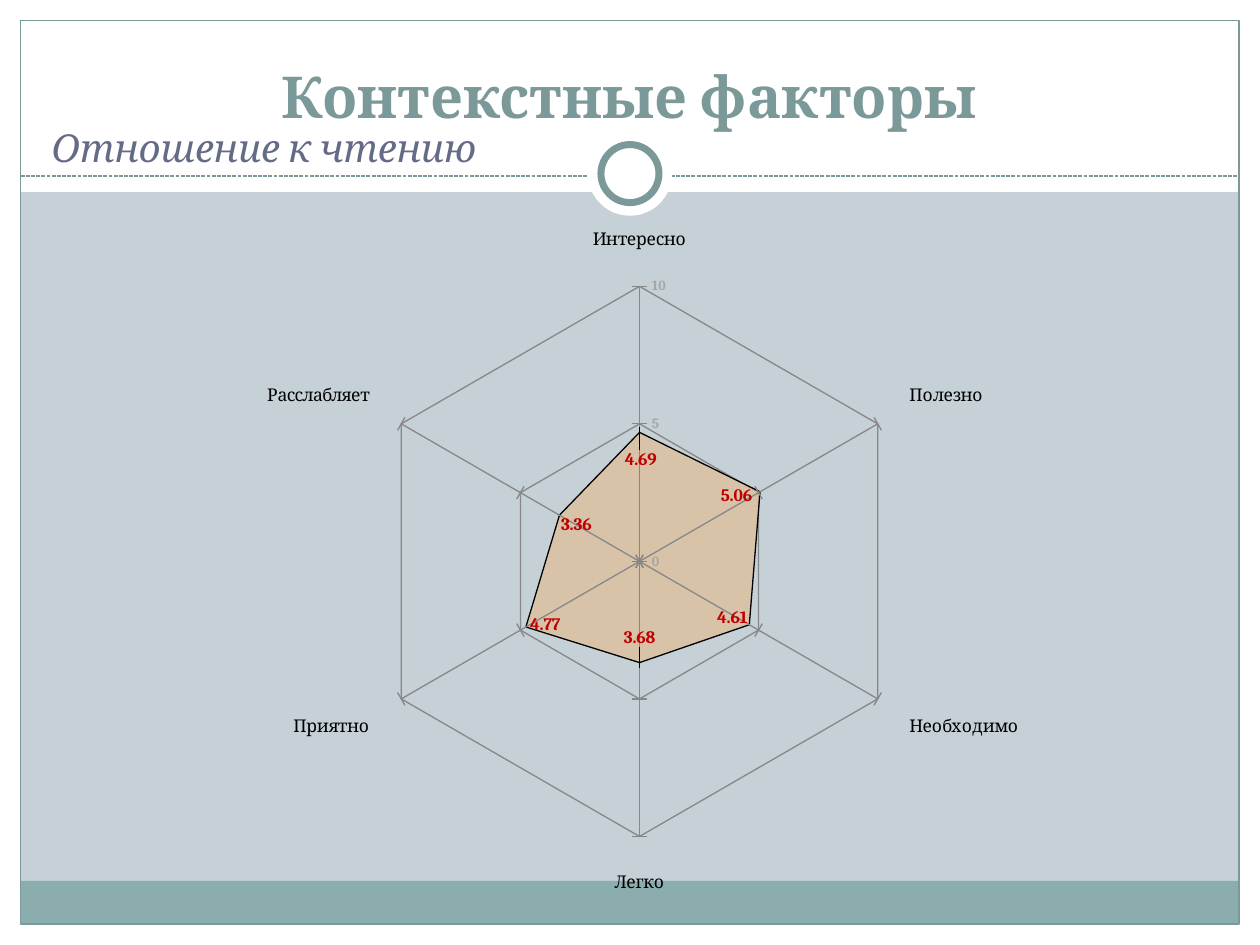
import pptx
import pptx.chart.data
import pptx.dml.color
import pptx.enum.chart
import pptx.enum.dml
import pptx.enum.shapes
import pptx.enum.text
import pptx.oxml
import pptx.oxml.ns
import pptx.util
from pptx.util import Cm

# Content: category, value, label shift in percent of the chart (x, y)
TITLE = "Контекстные факторы"
SUBTITLE = "Отношение к чтению"
ATTITUDES = [
    ("Интересно", 4.69, (0.1, 6.6)),
    ("Полезно", 5.06, (-3.7, 2.3)),
    ("Необходимо", 4.61, (-3.1, -2.7)),
    ("Легко", 3.68, (0, -6.3)),
    ("Приятно", 4.77, (3.3, -2.1)),
    ("Расслабляет", 3.36, (3.1, 3)),
]
PLOT_PERCENT = {"x": 26.4, "y": 11.2, "w": 46.8, "h": 77.6}

THEME = {
    "font": "Cambria",
    "back": "C5D1D7", "white": "FFFFFF", "band": "8CADAE", "accent": "7C999A",
    "subtitle": "646B86", "text": "000000", "scale": "A6A6A6", "grid": "878787",
    "area": "E3BC92", "value": "C00000",
    "title_pt": 33, "subtitle_pt": 22, "chart_pt": 10, "scale_pt": 8,
}

# Slide geometry in centimetres
W, H = 25.4, 19.05
EDGE = 0.42
HEADER_H = 3.87
BAND_H = 0.87
RULE_Y = 3.55
RING_Y = 3.5


def color(name):
    return pptx.dml.color.RGBColor.from_string(THEME[name])


def set_line(line, name, width):
    line.color.rgb = color(name)
    line.width = pptx.util.Pt(width)


def set_font(font, name, size, **style):
    font.name = THEME["font"]
    font.size = pptx.util.Pt(THEME[size])
    font.color.rgb = color(name)
    for key, value in style.items():
        setattr(font, key, value)


def add_shape(kind, x, y, w, h, fill=None, line=None, width=0.75):
    sp = s.shapes.add_shape(kind, Cm(x), Cm(y), Cm(w), Cm(h))
    sp.shadow.inherit = False
    if fill:
        sp.fill.solid()
        sp.fill.fore_color.rgb = color(fill)
    else:
        sp.fill.background()
    if line:
        set_line(sp.line, line, width)
    else:
        sp.line.fill.background()
    return sp


def add_text(text, x, y, w, h, anchor):
    tf = s.shapes.add_textbox(Cm(x), Cm(y), Cm(w), Cm(h)).text_frame
    tf.word_wrap = True
    tf.vertical_anchor = anchor
    p = tf.paragraphs[0]
    p.text = text
    return p


def make_layout(modes, percents):
    parts = "".join('<c:%s val="%s"/>' % mode for mode in modes)
    parts += "".join('<c:%s val="%.3f"/>' % (key, value / 100)
                     for key, value in percents.items())
    return pptx.oxml.parse_xml(
        "<c:layout %s><c:manualLayout>%s</c:manualLayout></c:layout>"
        % (pptx.oxml.ns.nsdecls("c"), parts))


prs = pptx.Presentation()
prs.slide_width, prs.slide_height = Cm(W), Cm(H)
s = prs.slides.add_slide(prs.slide_layouts[6])
s.background.fill.solid()
s.background.fill.fore_color.rgb = color("back")

RECT = pptx.enum.shapes.MSO_SHAPE.RECTANGLE
OVAL = pptx.enum.shapes.MSO_SHAPE.OVAL
inner_w, inner_h = W - 2 * EDGE, H - 2 * EDGE

# White margins, bottom band and frame
for box in [(0, H - EDGE, W, EDGE), (0, 0, W, HEADER_H),
            (0, 0, EDGE, H), (W - EDGE, 0, EDGE, H)]:
    add_shape(RECT, *box, fill="white")
add_shape(RECT, EDGE, H - EDGE - BAND_H, inner_w, BAND_H, fill="band")
add_shape(RECT, EDGE, EDGE, inner_w, inner_h, line="accent")

# Dashed header rule
rule = s.shapes.add_connector(pptx.enum.shapes.MSO_CONNECTOR.STRAIGHT,
                              Cm(EDGE), Cm(RULE_Y), Cm(W - EDGE), Cm(RULE_Y))
set_line(rule.line, "accent", 0.75)
rule.line.dash_style = pptx.enum.dml.MSO_LINE.SQUARE_DOT
rule._element.spPr.append(pptx.oxml.parse_xml(
    "<a:effectLst %s/>" % pptx.oxml.ns.nsdecls("a")))

# Ring on the rule
for d, line in [(1.7, None), (1.17, "accent")]:
    add_shape(OVAL, (W - d) / 2, RING_Y - d / 2, d, d, "white", line, 4)

# Title and subtitle
p = add_text(TITLE, 0.84, 0.62, 23.7, 2.12, pptx.enum.text.MSO_ANCHOR.BOTTOM)
p.alignment = pptx.enum.text.PP_ALIGN.CENTER
set_font(p.font, "accent", "title_pt", bold=True)
p = add_text(SUBTITLE, 0.79, 2.37, 24.13, 1.2, pptx.enum.text.MSO_ANCHOR.TOP)
p.space_before = pptx.util.Pt(4.4)
set_font(p.font, "subtitle", "subtitle_pt", italic=True)

# Radar chart
data = pptx.chart.data.CategoryChartData(number_format="0.00")
data.categories = [name for name, _, _ in ATTITUDES]
data.add_series("Series 1", [value for _, value, _ in ATTITUDES])
chart = s.shapes.add_chart(pptx.enum.chart.XL_CHART_TYPE.RADAR_FILLED,
                           Cm(1.09), Cm(4.17), Cm(23.7), Cm(14.3), data).chart
chart.has_legend = False
chart.has_title = False
set_font(chart.font, "text", "chart_pt")
plot = chart.plots[0]
plot.vary_by_categories = False

# Translucent area
series = plot.series[0]
series.format.fill.solid()
series.format.fill.fore_color.rgb = color("area")
set_line(series.format.line, "text", 0.75)
area = series._element.find(".//" + pptx.oxml.ns.qn("a:srgbClr"))
area.append(pptx.oxml.parse_xml(
    '<a:alpha %s val="66000"/>' % pptx.oxml.ns.nsdecls("a")))

# Value labels, moved inside the area
labels = series.data_labels
labels.show_value = True
labels.number_format = "0.00"
labels.number_format_is_linked = False
set_font(labels.font, "value", "chart_pt", bold=True)
for i in range(len(ATTITUDES)):
    set_font(series.points[i].data_label.font, "value", "chart_pt", bold=True)
label_elements = series._element.findall(".//" + pptx.oxml.ns.qn("c:dLbl"))
for element, (_, _, (dx, dy)) in zip(label_elements, ATTITUDES):
    element.insert(1, make_layout([], {"x": dx, "y": dy}))

# Axes
axis = chart.value_axis
axis.minimum_scale, axis.maximum_scale, axis.major_unit = 0, 10, 5
axis.major_tick_mark = pptx.enum.chart.XL_TICK_MARK.CROSS
axis.tick_labels.number_format = "0"
axis.tick_labels.number_format_is_linked = False
set_font(axis.tick_labels.font, "scale", "scale_pt", bold=True)
chart.category_axis.major_tick_mark = pptx.enum.chart.XL_TICK_MARK.OUTSIDE
for ax in (axis, chart.category_axis):
    ax.has_major_gridlines = True
    set_line(ax.major_gridlines.format.line, "grid", 0.75)
    set_line(ax.format.line, "grid", 0.75)

# Plot position
plot_area = chart._chartSpace.chart.plotArea
for old in plot_area.findall(pptx.oxml.ns.qn("c:layout")):
    plot_area.remove(old)
plot_area.insert(0, make_layout(
    [("layoutTarget", "inner"), ("xMode", "edge"), ("yMode", "edge")],
    PLOT_PERCENT))

prs.save("out.pptx")
